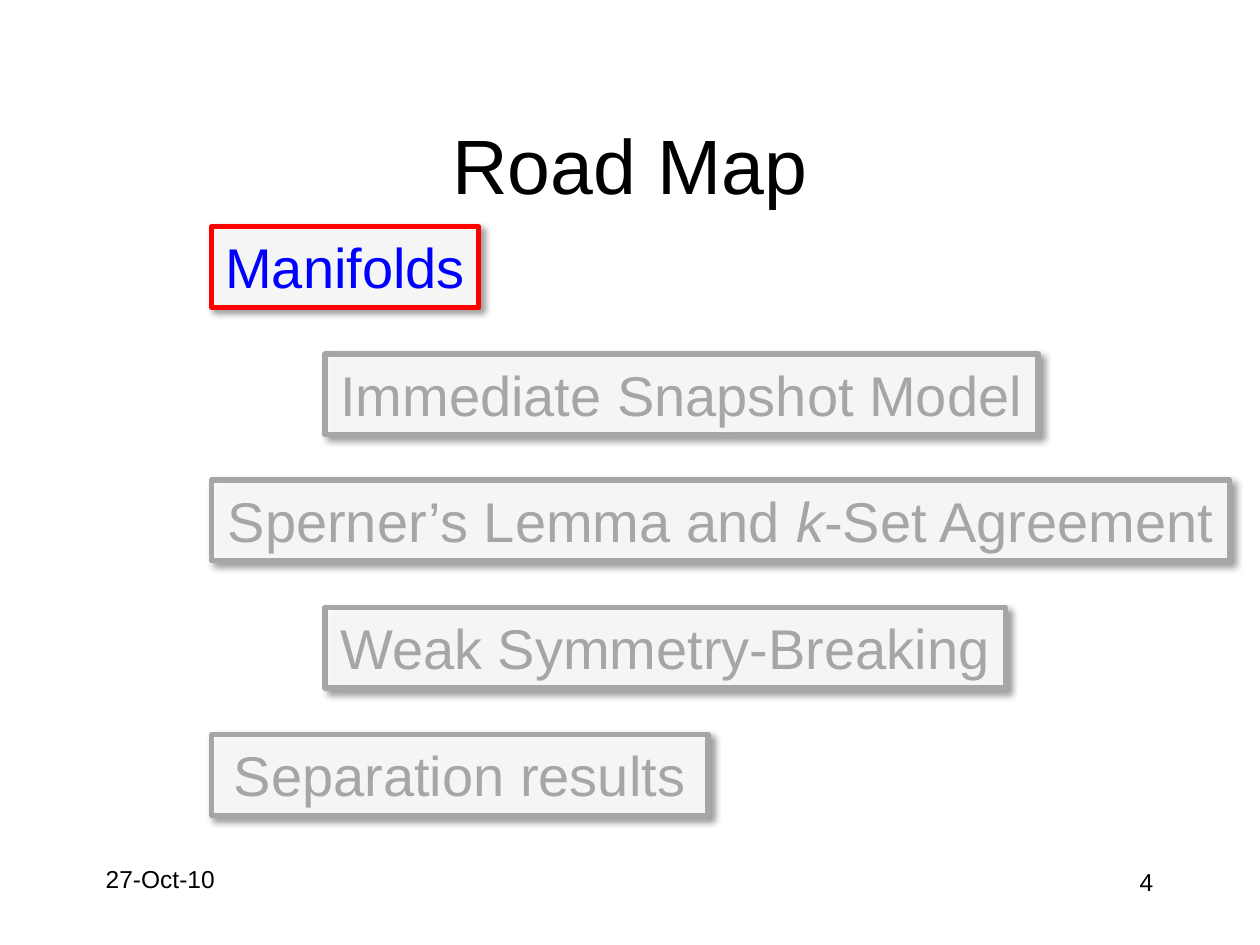
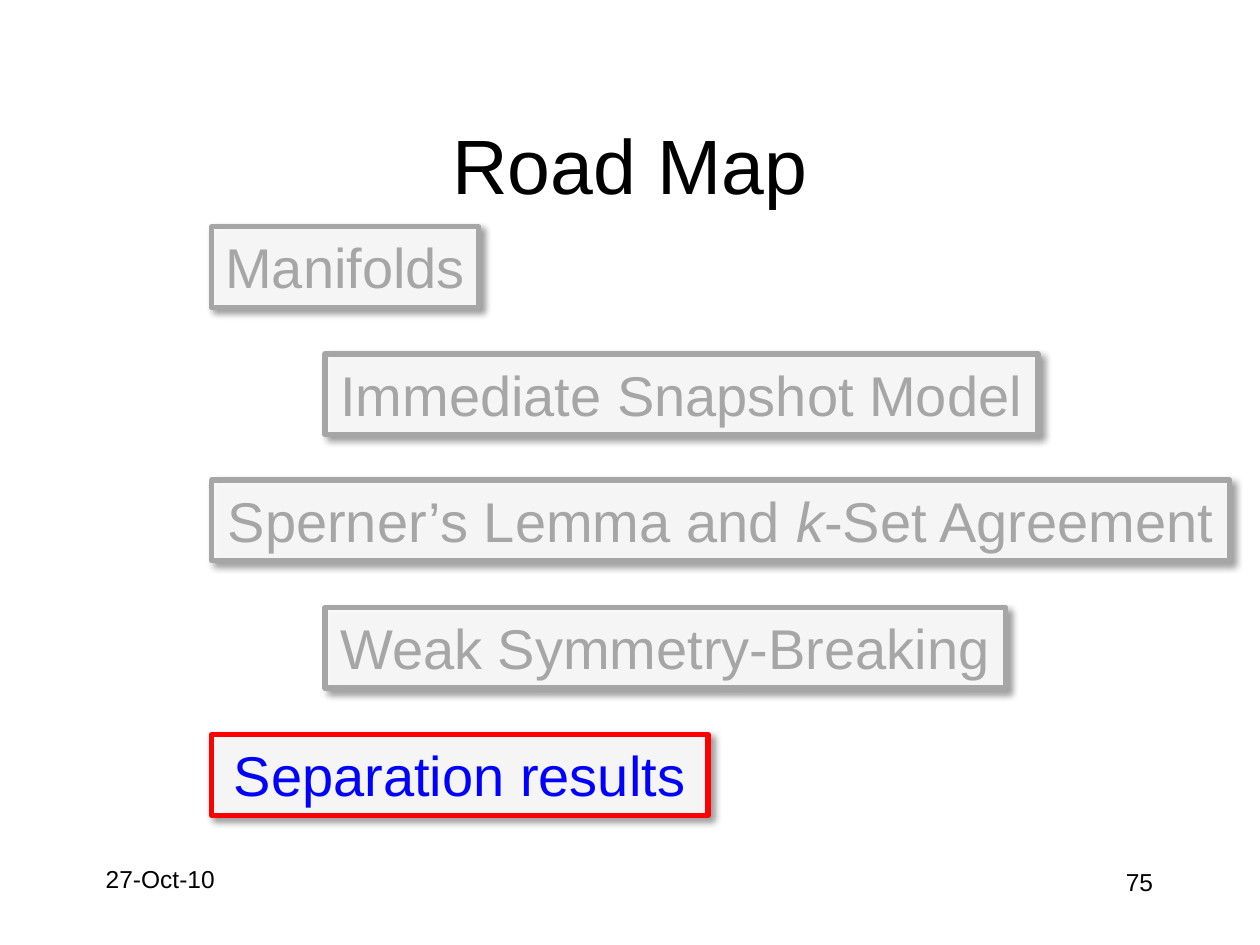
from dataclasses import dataclass

from lxml import etree
from pptx import Presentation
from pptx import util as u
from pptx.dml.color import RGBColor
from pptx.enum import shapes, text
from pptx.oxml import ns

PX = u.Inches(1) // 100  # 100 px to the inch

COLORS = {
    "ink": "000000",
    "panel": "FFFFFF",
    "active_line": "FF0000",
    "active_text": "0000FF",
    "muted": "A6A6A6",
}
FONT = "Arial"
SHADOW = {"blurRad": u.Pt(4), "dist": u.Pt(3), "dir": 45 * 60000}
ALIGN, ANCHOR = text.PP_ALIGN, text.MSO_ANCHOR

# Road map grid
FIRST_TOP, ROW_PITCH, STOP_HEIGHT = 180, 100.7, 64
COLUMN_LEFTS = (168, 258)


@dataclass(frozen=True)
class Label:
    """Plain text that stands in the same place on every slide."""
    left: int
    top: int
    width: int
    height: int
    size: int
    align: ALIGN
    anchor: ANCHOR = ANCHOR.TOP


@dataclass(frozen=True)
class Stop:
    """One boxed topic; parts between asterisks are italic."""
    wording: str
    width: int


TITLE = Label(75, 67, 850, 125, 44, ALIGN.CENTER, ANCHOR.MIDDLE)
DATE = Label(74, 681, 208, 50, 14, ALIGN.LEFT)
NUMBER = Label(717, 683, 208, 50, 14, ALIGN.RIGHT)

STOPS = (
    Stop("Manifolds", 212),
    Stop("Immediate Snapshot Model", 566),
    Stop("Sperner’s Lemma and *k*-Set Agreement", 808),
    Stop("Weak Symmetry-Breaking", 540),
    Stop("Separation results", 394),
)

# Slide number and the topic it highlights
SLIDES = ((4, "Manifolds"), (75, "Separation results"))


def apply_format(target, values: dict) -> None:
    for attribute, value in values.items():
        setattr(target, attribute, value)


def rgb(name: str) -> RGBColor:
    return RGBColor.from_string(COLORS[name])


def write(frame, wording: str, size: int, color: str, align: ALIGN) -> None:
    paragraph = frame.paragraphs[0]
    paragraph.alignment = align
    for index, part in enumerate(wording.split("*")):
        run = paragraph.add_run()
        run.text = part
        apply_format(run.font, {"name": FONT, "size": u.Pt(size), "italic": index % 2 == 1})
        run.font.color.rgb = rgb(color)


def add_label(slide, label: Label, wording: str) -> None:
    box = slide.shapes.add_textbox(
        label.left * PX, label.top * PX, label.width * PX, label.height * PX)
    apply_format(box.text_frame, {"word_wrap": True, "vertical_anchor": label.anchor})
    write(box.text_frame, wording, label.size, "ink", label.align)


def add_alpha(color_element, percent: int) -> None:
    etree.SubElement(color_element, ns.qn("a:alpha"), val=str(percent * 1000))


def add_shadow(shape) -> None:
    shape.shadow.inherit = False
    effects = shape.element.spPr.find(ns.qn("a:effectLst"))
    shadow = etree.SubElement(effects, ns.qn("a:outerShdw"), algn="tl", rotWithShape="0")
    for key, value in SHADOW.items():
        shadow.set(key, str(int(value)))
    add_alpha(etree.SubElement(shadow, ns.qn("a:srgbClr"), val=COLORS["ink"]), 40)


def add_stop(slide, stop: Stop, row: int, active: bool) -> None:
    left = COLUMN_LEFTS[row % 2]
    top = FIRST_TOP + round(row * ROW_PITCH)
    panel = slide.shapes.add_shape(
        shapes.MSO_SHAPE.RECTANGLE, left * PX, top * PX, stop.width * PX, STOP_HEIGHT * PX)

    # Translucent panel with outline and shadow
    panel.fill.solid()
    panel.fill.fore_color.rgb = rgb("panel")
    add_alpha(panel.element.spPr.find(".//" + ns.qn("a:srgbClr")), 90)
    panel.line.color.rgb = rgb("active_line" if active else "muted")
    panel.line.width = u.Pt(3)
    add_shadow(panel)

    # Topic wording
    apply_format(panel.text_frame, {
        "word_wrap": False,
        "auto_size": text.MSO_AUTO_SIZE.SHAPE_TO_FIT_TEXT,
        "vertical_anchor": ANCHOR.TOP,
    })
    write(panel.text_frame, stop.wording, 32,
          "active_text" if active else "muted", ALIGN.CENTER)


def add_road_map(deck, number: int, current: str) -> None:
    slide = deck.slides.add_slide(deck.slide_layouts[6])
    add_label(slide, TITLE, "Road Map")
    add_label(slide, DATE, "27-Oct-10")
    add_label(slide, NUMBER, str(number))
    for row, stop in enumerate(STOPS):
        add_stop(slide, stop, row, stop.wording == current)


def main() -> None:
    deck = Presentation()
    apply_format(deck, {"slide_width": 1000 * PX, "slide_height": 750 * PX})
    for number, current in SLIDES:
        add_road_map(deck, number, current)
    deck.save("out.pptx")


if __name__ == "__main__":
    main()
